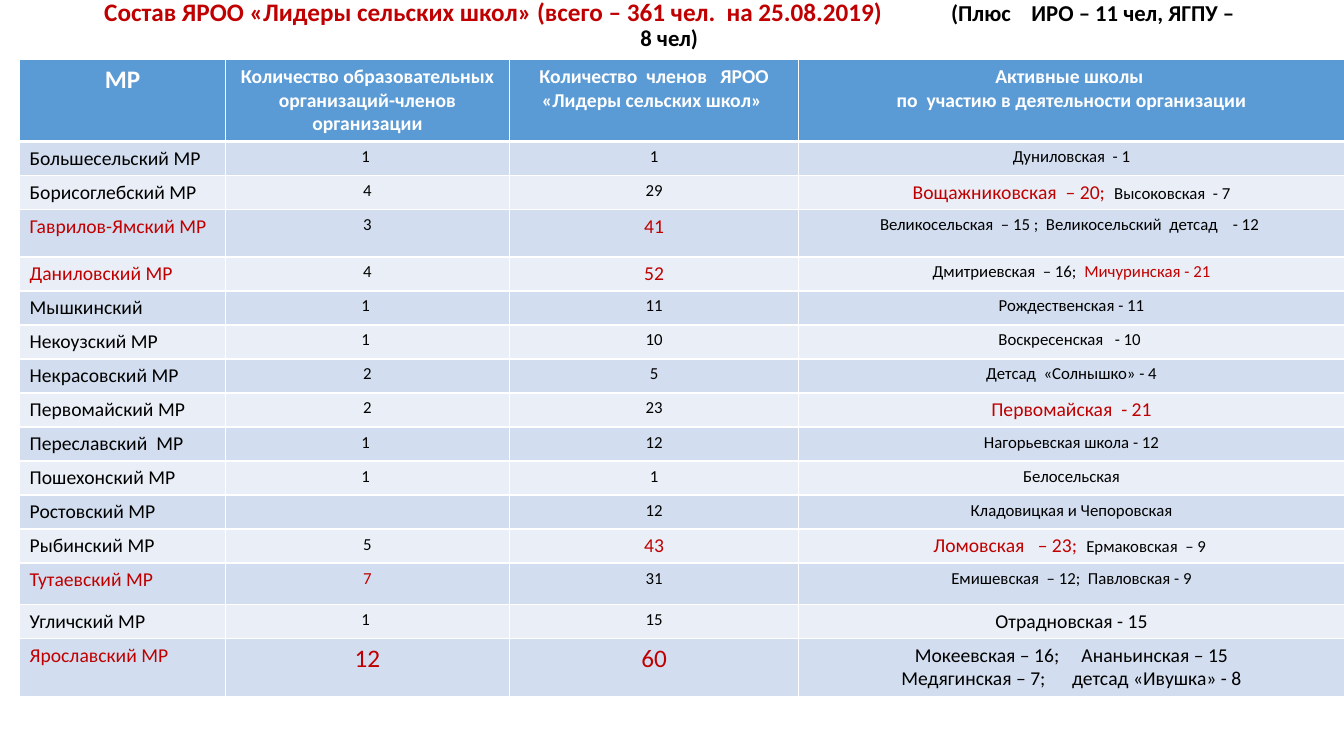
from lxml.etree import SubElement
from pptx import Presentation
from pptx.dml.color import RGBColor
from pptx.enum.text import MSO_ANCHOR, MSO_AUTO_SIZE, PP_ALIGN as Align
from pptx.oxml.ns import qn
from pptx.util import Pt

# Content: a cell is plain text or a list of (text, size, colour) spans
COLORS = {"red": "C00000", "black": "000000", "white": "FFFFFF",
          "header": "5B9BD5", "odd": "D2DEEF", "even": "EAEFF7"}

TITLE = [
    ("Состав ЯРОО «Лидеры сельских школ» (всего – 361 чел.  на 25.08.2019)            ", 18, "red"),
    ("(Плюс    ИРО – 11 чел, ЯГПУ – 8 чел)", 16.2, "black"),
]
HEADER = [
    [("МР", 18, "white")],
    "Количество образовательных организаций-членов организации",
    "Количество  членов   ЯРОО «Лидеры сельских школ» ",
    "Активные школы \nпо  участию в деятельности организации",
]
DISTRICTS = [
    ("Большесельский МР", "1 ", "1", "Дуниловская  - 1"),
    ("Борисоглебский МР", "4", "29",
     [("Вощажниковская  – 20;  ", 14, "red"), ("Высоковская  - 7", 12, "black")]),
    ([("Гаврилов-Ямский МР", 14, "red")], "3", [("41", 14, "red")],
     "Великосельская  – 15 ;  Великосельский  детсад    - 12 "),
    ([("Даниловский МР", 14, "red")], "4", [("52", 14, "red")],
     [("Дмитриевская  – 16;  ", 12, "black"), ("Мичуринская - 21", 12, "red")]),
    ("Мышкинский", "1 ", "11", "Рождественская - 11"),
    ("Некоузский МР", "1 ", "10", "Воскресенская   - 10 "),
    ("Некрасовский МР", "2", "5", "Детсад  «Солнышко» - 4"),
    ("Первомайский МР", "2", "23", [("Первомайская  - 21", 14, "red")]),
    ("Переславский  МР", "1 ", "12", "Нагорьевская школа - 12"),
    ("Пошехонский МР", "1 ", "1", "Белосельская"),
    ("Ростовский МР", "", "12", "Кладовицкая и Чепоровская"),
    ("Рыбинский МР", "5", [("43", 14, "red")],
     [("Ломовская   – 23;  ", 14, "red"), ("Ермаковская  – 9 ", 12, "black")]),
    ([("Тутаевский МР", 14, "red")], [("7", 12, "red")], "31",
     "Емишевская  – 12;  Павловская - 9"),
    ("Угличский МР", "1 ", "15", [("Отрадновская - 15", 14, "black")]),
    ([("Ярославский МР", 14, "red")], [("12", 18, "red")], [("60", 18, "red")],
     [("Мокеевская – 16;     Ананьинская – 15\nМедягинская – 7;      детсад «Ивушка» - 8",
       14, "black")]),
]

# Geometry in points
COLUMN_WIDTHS = [147, 203, 206.5, 390]
HEADER_HEIGHT, ROW_HEIGHT = 58.5, 24.3
TALL_ROWS = {3: 34, 13: 29.5, 15: 41.4}


def write(frame, content, size=12, color="black", bold=False, align=Align.CENTER, spacing=None):
    spans = [(content, size, color)] if isinstance(content, str) else content
    para = frame.paragraphs[0]
    for text, span_size, span_color in spans:
        for number, line in enumerate(text.split("\n")):
            if number:
                para = frame.add_paragraph()
            if not line:
                SubElement(para._p, qn("a:endParaRPr"), sz=str(size * 100))
                continue
            span = para.add_run()
            span.text = line
            span.font.name = "Calibri"
            span.font.size = Pt(span_size)
            span.font.bold = bold
            span.font.color.rgb = RGBColor.from_string(COLORS[span_color])
    for para in frame.paragraphs:
        para.alignment = align
        para.line_spacing = spacing


def paint_cell(cell, fill, bottom_width):
    properties = cell._tc.get_or_add_tcPr()
    for side, width in (("L", 1), ("R", 1), ("T", 1), ("B", bottom_width)):
        line = SubElement(properties, qn("a:ln" + side), w=str(Pt(width)))
        SubElement(SubElement(line, qn("a:solidFill")), qn("a:srgbClr"), val=COLORS["white"])
    cell.fill.solid()
    cell.fill.fore_color.rgb = RGBColor.from_string(COLORS[fill])


deck = Presentation()
deck.slide_width, deck.slide_height = Pt(960), Pt(540)
page = deck.slides.add_slide(deck.slide_layouts[5])

# Title
title = page.shapes.title
title.left, title.top, title.width, title.height = Pt(64), Pt(0), Pt(828), Pt(36)
title.text_frame.word_wrap = True
title.text_frame.auto_size = MSO_AUTO_SIZE.NONE
title.text_frame.vertical_anchor = MSO_ANCHOR.MIDDLE
write(title.text_frame, TITLE, bold=True, spacing=0.9)

# Table grid
rows = [HEADER, *DISTRICTS]
heights = [HEADER_HEIGHT] + [TALL_ROWS.get(i, ROW_HEIGHT) for i in range(1, len(rows))]
table = page.shapes.add_table(len(rows), len(COLUMN_WIDTHS), Pt(14), Pt(42.5),
                              Pt(sum(COLUMN_WIDTHS)), Pt(sum(heights))).table
for column, width in zip(table.columns, COLUMN_WIDTHS):
    column.width = Pt(width)

# Table cells
for i, (row, height) in enumerate(zip(rows, heights)):
    table.rows[i].height = Pt(height)
    for j, content in enumerate(row):
        cell = table.cell(i, j)
        if i == 0:
            paint_cell(cell, "header", 3)
            write(cell.text_frame, content, size=14, color="white", bold=True)
        else:
            paint_cell(cell, "odd" if i % 2 else "even", 1)
            write(cell.text_frame, content, size=12 if j else 14,
                  align=Align.CENTER if j else Align.LEFT)

deck.save("out.pptx")
